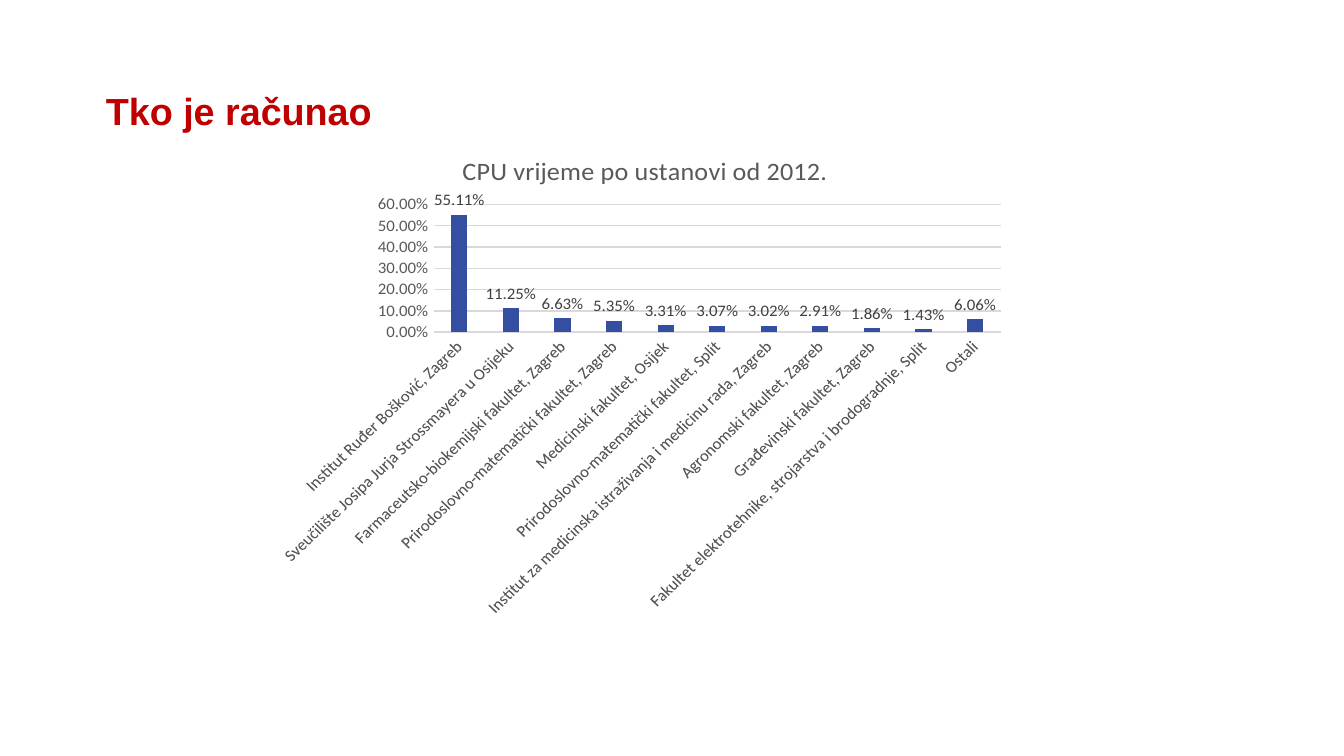
from typing import NamedTuple

from pptx import Presentation
from pptx import util as u
from pptx.chart.data import CategoryChartData
from pptx.dml.color import RGBColor
from pptx.enum import chart as ch, text

RED = RGBColor(0xC0, 0x00, 0x00)
BLUE = RGBColor(0x34, 0x4E, 0xA1)
DARK = RGBColor(0x40, 0x40, 0x40)
GRAY = RGBColor(0x59, 0x59, 0x59)
RULE = RGBColor(0xD9, 0xD9, 0xD9)
PERCENT = "0.00%"


class Institution(NamedTuple):
    name: str
    share: float


INSTITUTIONS = [
    Institution("Institut Ruđer Bošković, Zagreb", 0.5511),
    Institution("Sveučilište Josipa Jurja Strossmayera u Osijeku", 0.1125),
    Institution("Farmaceutsko-biokemijski fakultet, Zagreb", 0.0663),
    Institution("Prirodoslovno-matematički fakultet, Zagreb", 0.0535),
    Institution("Medicinski fakultet, Osijek", 0.0331),
    Institution("Prirodoslovno-matematički fakultet, Split", 0.0307),
    Institution("Institut za medicinska istraživanja i medicinu rada, Zagreb", 0.0302),
    Institution("Agronomski fakultet, Zagreb", 0.0291),
    Institution("Građevinski fakultet, Zagreb", 0.0186),
    Institution("Fakultet elektrotehnike, strojarstva i brodogradnje, Split", 0.0143),
    Institution("Ostali", 0.0606),
]


def style_font(font, size: float, color: RGBColor, name: str = "Calibri",
               bold: bool = False) -> None:
    font.name, font.size, font.bold = name, u.Pt(size), bold
    font.color.rgb = color


def style_line(line, color: RGBColor) -> None:
    line.color.rgb = color
    line.width = u.Pt(0.75)


def add_title(s, title: str) -> None:
    sp = s.shapes.add_textbox(u.Inches(0.69), u.Inches(0.3),
                              u.Inches(8.62), u.Inches(1.09))
    tf = sp.text_frame
    tf.word_wrap = True
    tf.vertical_anchor = text.MSO_ANCHOR.MIDDLE
    p = tf.paragraphs[0]
    p.text = title
    p.line_spacing = 0.9
    style_font(p.font, 20.2, RED, "Arial", True)


def add_share_chart(s, title: str, institutions: list[Institution]) -> None:
    data = CategoryChartData(number_format=PERCENT)
    data.categories = [i.name for i in institutions]
    data.add_series("Series 1", [i.share for i in institutions])
    chart = s.shapes.add_chart(
        ch.XL_CHART_TYPE.COLUMN_CLUSTERED, u.Inches(2.01), u.Inches(0.99),
        u.Inches(5.58), u.Inches(3.6), data).chart
    style_font(chart.font, 10, GRAY)
    chart.has_legend = False

    # Chart title
    chart.has_title = True
    p = chart.chart_title.text_frame.paragraphs[0]
    p.text = title
    style_font(p.font, 14, GRAY)
    chart.chart_title.include_in_layout = False

    # Axes
    for axis in (chart.category_axis, chart.value_axis):
        axis.major_tick_mark = axis.minor_tick_mark = ch.XL_TICK_MARK.NONE
        style_font(axis.tick_labels.font, 9, GRAY)
    style_line(chart.category_axis.format.line, RULE)
    values = chart.value_axis
    values.format.line.fill.background()
    style_line(values.major_gridlines.format.line, RULE)
    values.tick_labels.number_format = PERCENT
    values.tick_labels.number_format_is_linked = False

    # Columns and their labels
    plot = chart.plots[0]
    plot.vary_by_categories = False
    plot.gap_width, plot.overlap = 219, -27
    series = plot.series[0]
    series.format.fill.solid()
    series.format.fill.fore_color.rgb = BLUE
    labels = series.data_labels
    labels.show_value = True
    labels.position = ch.XL_LABEL_POSITION.OUTSIDE_END
    labels.number_format = PERCENT
    labels.number_format_is_linked = False
    style_font(labels.font, 9, DARK)


def main() -> None:
    prs = Presentation()
    # Widescreen, 16:9
    prs.slide_width = u.Inches(10)
    prs.slide_height = prs.slide_width * 9 // 16
    s = prs.slides.add_slide(prs.slide_layouts[6])
    add_title(s, "Tko je računao")
    add_share_chart(s, "CPU vrijeme po ustanovi od 2012.", INSTITUTIONS)
    prs.save("out.pptx")


if __name__ == "__main__":
    main()
